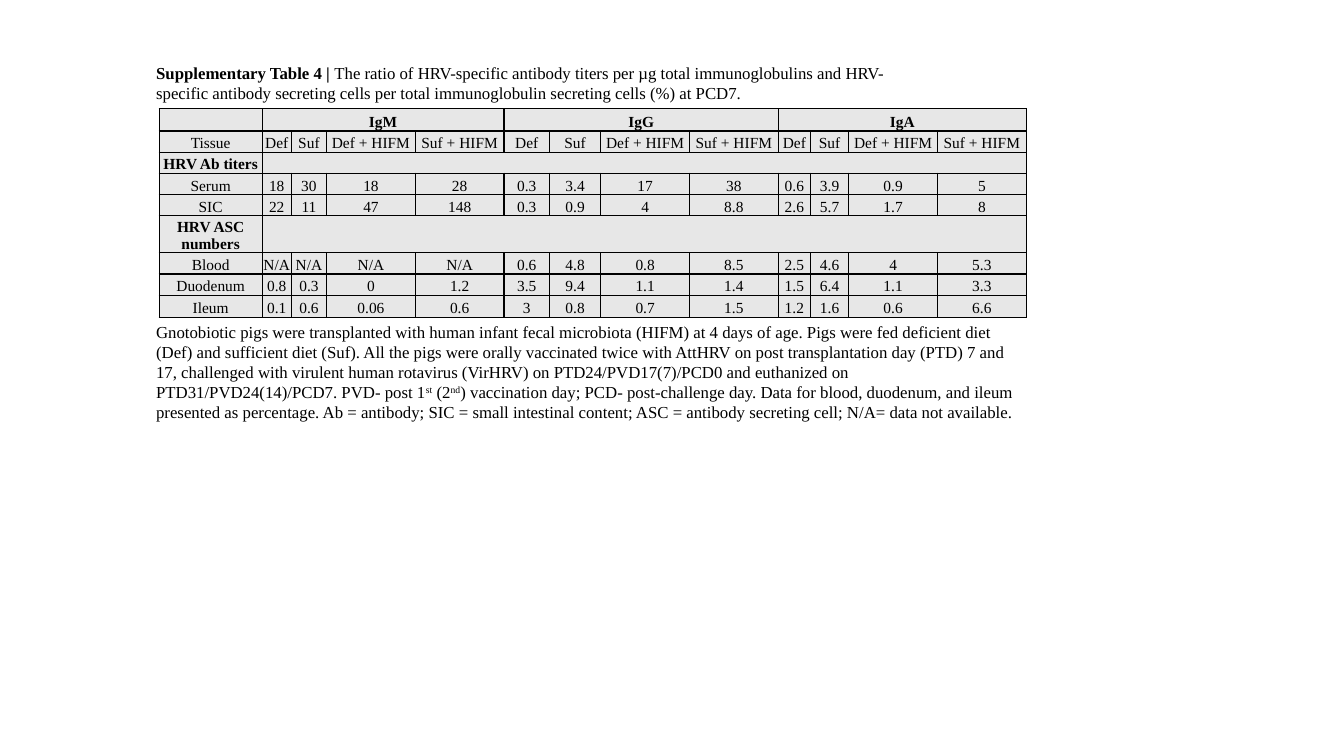
from lxml import etree
from pptx import Presentation, util as u
from pptx.dml import color
from pptx.enum import text
from pptx.oxml import ns

COLORS = {"ink": "000000", "cell": "E7E7E7"}
GRID_COLUMNS, GRID_ROWS = 1333, 750

COLUMN_WIDTHS = [102, 29, 35, 88, 88, 45, 51, 88, 88, 32, 38, 88, 88]
ROW_HEIGHTS = [22, 21, 21, 21, 21, 37, 21, 21, 22]
GROUPS = ["IgM", "IgG", "IgA"]
DIETS = ["Def", "Suf", "Def + HIFM", "Suf + HIFM"]
ROWS = [
    ["", *(label for group in GROUPS for label in (group, "", "", ""))],
    ["Tissue", *DIETS * len(GROUPS)],
    ["HRV Ab titers"],
    "Serum 18 30 18 28 0.3 3.4 17 38 0.6 3.9 0.9 5".split(),
    "SIC 22 11 47 148 0.3 0.9 4 8.8 2.6 5.7 1.7 8".split(),
    ["HRV ASC numbers"],
    "Blood N/A N/A N/A N/A 0.6 4.8 0.8 8.5 2.5 4.6 4 5.3".split(),
    "Duodenum 0.8 0.3 0 1.2 3.5 9.4 1.1 1.4 1.5 6.4 1.1 3.3".split(),
    "Ileum 0.1 0.6 0.06 0.6 3 0.8 0.7 1.5 1.2 1.6 0.6 6.6".split(),
]
SECTION_ROWS = [i for i, row in enumerate(ROWS) if len(row) == 1]
# Each merge: row, first column, last column
MERGES = [(0, first, first + 3) for first in (1, 5, 9)]
MERGES += [(i, 1, 12) for i in SECTION_ROWS]

CAPTION = [
    ("Supplementary Table 4 | ", {"bold": True}),
    ("The ratio of HRV-specific antibody titers per µg total immunoglobulins "
     "and HRV-specific antibody secreting cells per total immunoglobulin "
     "secreting cells (%) at PCD7.", {}),
]
NOTE = [
    ("Gnotobiotic pigs were transplanted with human infant fecal microbiota "
     "(HIFM) at 4 days of age. Pigs were fed deficient diet (Def) and "
     "sufficient diet (Suf). All the pigs were orally vaccinated twice with "
     "AttHRV on post transplantation day (PTD) 7 and 17, challenged with "
     "virulent human rotavirus (VirHRV) on PTD24/PVD17(7)/PCD0 and euthanized "
     "on PTD31/PVD24(14)/PCD7. PVD- post 1", {}),
    ("st", {"raised": True}),
    (" (2", {}),
    ("nd", {"raised": True}),
    (") vaccination day; PCD- post-challenge day. Data for blood, duodenum, "
     "and ileum presented as percentage. Ab = antibody; SIC = small intestinal "
     "content; ASC = antibody secreting cell; N/A= data not available.", {}),
]


class Page:
    font_name = "Times New Roman"
    text_size = 12
    table_size = 11

    def __init__(self, deck):
        self.step_x = deck.slide_width / GRID_COLUMNS
        self.step_y = deck.slide_height / GRID_ROWS
        self.slide = deck.slides.add_slide(deck.slide_layouts[6])

    def across(self, columns):
        return round(columns * self.step_x)

    def down(self, rows):
        return round(rows * self.step_y)

    def frame(self, left, top, width, height):
        return (self.across(left), self.down(top),
                self.across(width), self.down(height))

    def style(self, para, size, bold=False):
        font = para.font
        font.name, font.size, font.bold = self.font_name, u.Pt(size), bold
        font.color.rgb = color.RGBColor.from_string(COLORS["ink"])

    def paragraph(self, spans, *place):
        box = self.slide.shapes.add_textbox(*self.frame(*place))
        box.text_frame.word_wrap = True
        box.text_frame.auto_size = text.MSO_AUTO_SIZE.SHAPE_TO_FIT_TEXT
        para = box.text_frame.paragraphs[0]
        self.style(para, self.text_size)
        for words, look in spans:
            span = para.add_run()
            span.text = words
            if look.get("bold"):
                span.font.bold = True
            if look.get("raised"):
                span._r.get_or_add_rPr().set("baseline", "30000")

    def border(self, cell):
        """Draw a one-point line on all four sides, ahead of the cell's fill."""
        properties = cell._tc.get_or_add_tcPr()
        for index, side in enumerate(("lnL", "lnR", "lnT", "lnB")):
            line = etree.Element(ns.qn(f"a:{side}"), w=str(u.Pt(1)))
            fill = etree.SubElement(line, ns.qn("a:solidFill"))
            etree.SubElement(fill, ns.qn("a:srgbClr"), val=COLORS["ink"])
            properties.insert(index, line)

    def cell(self, cell, words, bold):
        cell.fill.solid()
        cell.fill.fore_color.rgb = color.RGBColor.from_string(COLORS["cell"])
        cell.vertical_anchor = text.MSO_ANCHOR.BOTTOM
        cell.margin_left = cell.margin_right = cell.margin_top = self.across(1)
        cell.margin_bottom = 0
        self.border(cell)
        para = cell.text_frame.paragraphs[0]
        para.alignment = text.PP_ALIGN.CENTER
        self.style(para, self.table_size, bold)
        if words:
            para.add_run().text = words
        else:
            # An empty cell needs its own end size to keep the row low
            end = para._p.get_or_add_endParaRPr()
            end.set("sz", str(self.table_size * 100))

    def table(self, left, top):
        place = self.frame(left, top, sum(COLUMN_WIDTHS), sum(ROW_HEIGHTS))
        table = self.slide.shapes.add_table(
            len(ROWS), len(COLUMN_WIDTHS), *place).table
        table.first_row = table.horz_banding = False
        for column, width in zip(table.columns, COLUMN_WIDTHS):
            column.width = self.across(width)
        for row, height in zip(table.rows, ROW_HEIGHTS):
            row.height = self.down(height)
        for i, labels in enumerate(ROWS):
            bold = i == 0 or i in SECTION_ROWS
            for j in range(len(COLUMN_WIDTHS)):
                words = labels[j] if j < len(labels) else ""
                self.cell(table.cell(i, j), words, bold)
        for i, first, last in MERGES:
            table.cell(i, first).merge(table.cell(i, last))


def main():
    deck = Presentation()
    deck.slide_width, deck.slide_height = u.Inches(13.33), u.Inches(7.5)
    page = Page(deck)
    page.table(158, 108)
    page.paragraph(CAPTION, 145, 57, 771, 50)
    page.paragraph(NOTE, 145, 314, 874, 131)
    deck.save("out.pptx")


if __name__ == "__main__":
    main()
